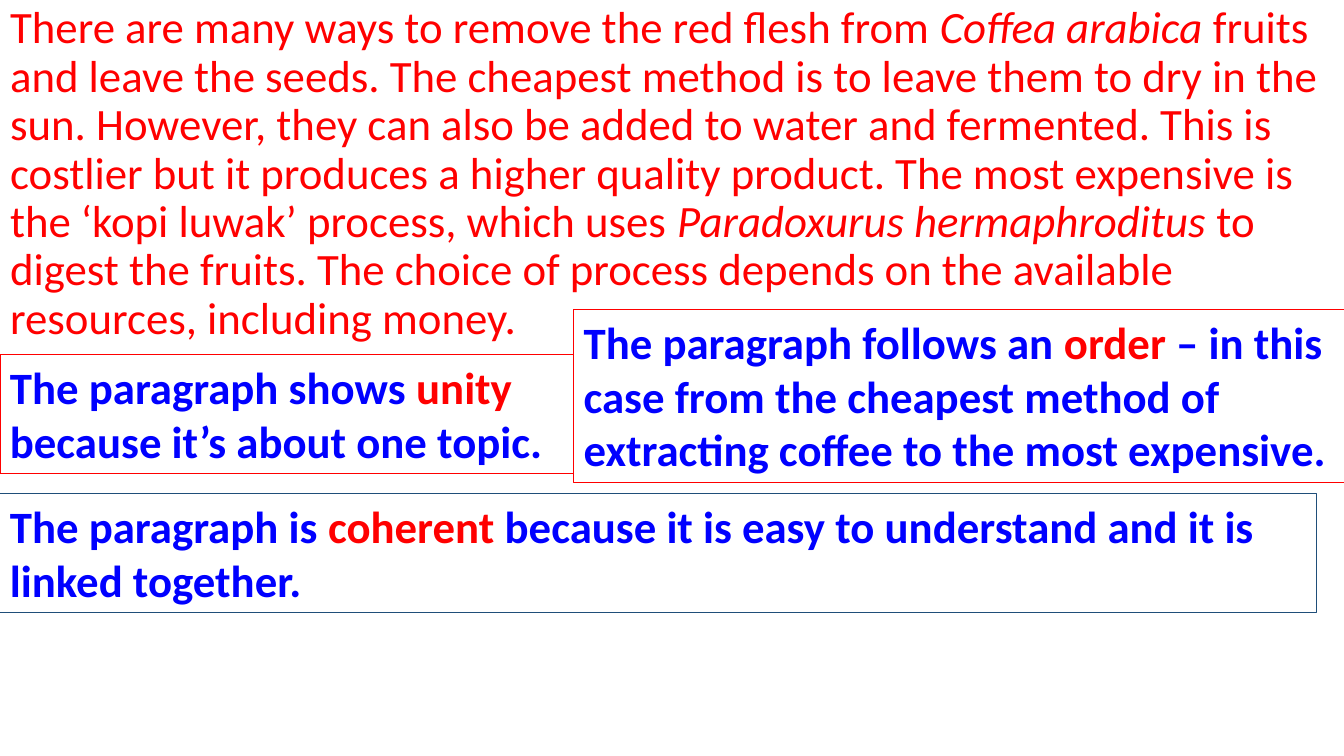
from pptx import Presentation
from pptx import util as u
from pptx.dml.color import RGBColor
from pptx.enum import shapes, text
from pptx.oxml.ns import qn
from lxml import etree

RED, BLUE, NAVY = "FF0000", "0000FF", "1F4E79"


def rgb(value):
    return RGBColor.from_string(value)


class Deck:
    """Holds the text style and the current slide."""

    font = {"name": "Calibri", "size": u.Pt(32)}

    def __init__(self, prs):
        self.s = prs.slides.add_slide(prs.slide_layouts[1])
        title = self.s.shapes.title
        title.element.getparent().remove(title.element)

    def add_runs(self, p, runs):
        """Add runs given as (words, colour, extra font values)."""
        for words, colour, extra in runs:
            r = p.add_run()
            r.text = words
            for key, value in {**self.font, **extra}.items():
                setattr(r.font, key, value)
            r.font.color.rgb = rgb(colour)

    def body(self, box, runs):
        sp = self.s.placeholders[1]
        for key, value in zip(("left", "top", "width", "height"), box):
            setattr(sp, key, u.Inches(value))
        tf = sp.text_frame
        tf.auto_size = text.MSO_AUTO_SIZE.NONE
        p = tf.paragraphs[0]
        p.line_spacing, p.space_before = 0.9, u.Pt(10)
        # Plain paragraph: no bullet, no indent
        pPr = p._p.get_or_add_pPr()
        pPr.set("marL", "0")
        pPr.set("indent", "0")
        etree.SubElement(pPr, qn("a:buNone"))
        self.add_runs(p, runs)

    def note(self, box, line, before, keyword, after):
        """Outlined box with one keyword picked out in red."""
        sp = self.s.shapes.add_shape(shapes.MSO_SHAPE.RECTANGLE, *map(u.Inches, box))
        sp.shadow.inherit = False
        sp.fill.background()
        sp.line.color.rgb = rgb(line)
        sp.line.width = u.Pt(0.75)
        tf = sp.text_frame
        frame = {"word_wrap": True, "vertical_anchor": text.MSO_ANCHOR.TOP,
                 "auto_size": text.MSO_AUTO_SIZE.SHAPE_TO_FIT_TEXT}
        for key, value in frame.items():
            setattr(tf, key, value)
        p = tf.paragraphs[0]
        p.alignment = text.PP_ALIGN.LEFT
        bold = {"bold": True}
        self.add_runs(p, [(before, BLUE, bold), (keyword, RED, bold), (after, BLUE, bold)])


def main():
    prs = Presentation()
    prs.slide_width, prs.slide_height = u.Inches(13.33), u.Inches(7.5)
    deck = Deck(prs)

    # Sample paragraph, species names in italics
    italic = {"italic": True}
    deck.body((0, 0, 13.33, 4.41), [
        ("There are many ways to remove the red flesh from ", RED, {}),
        ("Coffea arabica", RED, italic),
        (" fruits and leave the seeds. The cheapest method is to leave them to dry "
         "in the sun. However, they can also be added to water and fermented. This is "
         "costlier but it produces a higher quality product. The most expensive is "
         "the ‘kopi luwak’ process, which uses ", RED, {}),
        ("Paradoxurus hermaphroditus", RED, italic),
        (" to digest the fruits. The choice of process depends on the available "
         "resources, including money.", RED, {}),
    ])

    # Comments on unity, order and coherence
    deck.note((0, 3.52, 5.69, 1.18), RED,
              "The paragraph shows ", "unity ", "because it’s about one topic.")
    deck.note((5.69, 3.07, 7.65, 1.72), RED, "The paragraph follows an ", "order ",
              "– in this case from the cheapest method of extracting coffee "
              "to the most expensive.")
    deck.note((0, 4.9, 13.06, 1.18), NAVY, "The paragraph is ", "coherent ",
              "because it is easy to understand and it is linked together.")

    prs.save("out.pptx")


if __name__ == "__main__":
    main()
